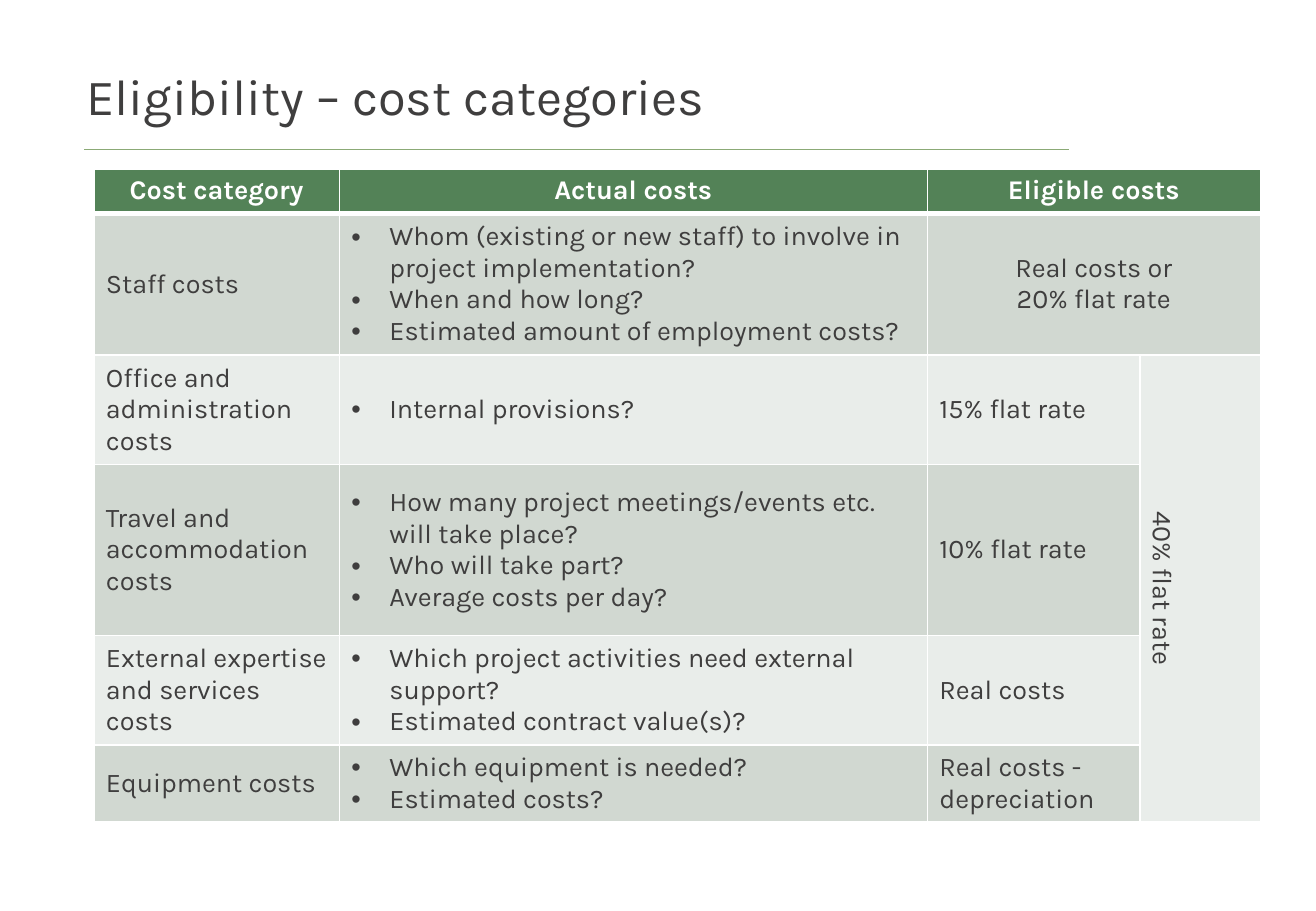
from lxml import etree
from pptx import Presentation
from pptx import util as u
from pptx.dml.color import RGBColor
from pptx.enum import shapes, text
from pptx.oxml import ns

INK = RGBColor(0x3F, 0x3E, 0x3E)
WHITE = RGBColor(0xFF, 0xFF, 0xFF)
GREEN = RGBColor(0x53, 0x82, 0x57)
RULE = RGBColor(0x8B, 0xAA, 0x76)
BANDS = [RGBColor(0xE9, 0xED, 0xEA), RGBColor(0xD1, 0xD8, 0xD1)]

MID = text.PP_ALIGN.CENTER
LEFT = text.PP_ALIGN.LEFT


def sub(node, tag, **attrs):
    return etree.SubElement(node, ns.qn(tag), **attrs)


class Deck:
    """Holds the style and the slide; lengths are percent of the slide."""
    font = "Karla"
    size = 16

    def __init__(self, wide, high):
        self.prs = Presentation()
        self.prs.slide_width = u.Inches(wide)
        self.prs.slide_height = u.Inches(high)
        self.slide = self.prs.slides.add_slide(self.prs.slide_layouts[6])

    def x(self, share):
        return u.Emu(round(self.prs.slide_width * share / 100))

    def y(self, share):
        return u.Emu(round(self.prs.slide_height * share / 100))

    def put(self, frame, lines, color, size=None, bold=False,
            align=LEFT, dots=False):
        frame.word_wrap = True
        for i, line in enumerate(lines):
            para = frame.paragraphs[0] if i == 0 else frame.add_paragraph()
            para.alignment = align
            if dots:
                props = para._p.get_or_add_pPr()
                hang = self.x(2.89)
                props.set("marL", str(hang))
                props.set("indent", str(-hang))
                sub(props, "a:buFont", typeface="Arial")
                sub(props, "a:buChar", char="•")
            run = para.add_run()
            run.text = line
            run.font.name = self.font
            run.font.size = u.Pt(size or self.size)
            run.font.bold = bold
            run.font.color.rgb = color

    def title(self, words, x, y, w, h):
        box = self.slide.shapes.add_textbox(
            self.x(x), self.y(y), self.x(w), self.y(h))
        box.text_frame.vertical_anchor = text.MSO_ANCHOR.BOTTOM
        self.put(box.text_frame, [words], INK, size=30)

    def rule(self, x1, x2, y):
        line = self.slide.shapes.add_connector(
            shapes.MSO_CONNECTOR.STRAIGHT,
            self.x(x1), self.y(y), self.x(x2), self.y(y))
        line.line.color.rgb = RULE
        line.line.width = u.Pt(0.5)
        sub(line._element.spPr, "a:effectLst")

    def table(self, x, y, cols, rows):
        frame = self.slide.shapes.add_table(
            len(rows), len(cols), self.x(x), self.y(y),
            self.x(sum(cols)), self.y(sum(rows)))
        grid = frame.table
        for col, w in zip(grid.columns, cols):
            col.width = self.x(w)
        for row, h in zip(grid.rows, rows):
            row.height = self.y(h)
        for r in range(len(rows)):
            for c in range(len(cols)):
                self.paint(grid.cell(r, c), r)
        return grid

    def paint(self, cell, r):
        props = cell._tc.get_or_add_tcPr()
        thick = {0: "a:lnB", 1: "a:lnT"}.get(r)
        for side in ("a:lnL", "a:lnR", "a:lnT", "a:lnB"):
            edge = sub(props, side, w=str(u.Pt(3 if side == thick else 1)))
            sub(sub(edge, "a:solidFill"), "a:srgbClr", val=str(WHITE))
        cell.fill.solid()
        cell.fill.fore_color.rgb = BANDS[r % 2] if r else GREEN
        if r:
            cell.vertical_anchor = text.MSO_ANCHOR.MIDDLE


HEADS = ["Cost category", "Actual costs", "Eligible costs"]

# Category, questions, eligible costs
ROWS = [
    ("Staff costs",
     ["Whom (existing or new staff) to involve in project implementation?",
      "When and how long?",
      "Estimated amount of employment costs?"],
     ["Real costs or", "20% flat rate"]),
    ("Office and administration costs",
     ["Internal provisions?"],
     ["15% flat rate"]),
    ("Travel and accommodation costs",
     ["How many project meetings/events etc. will take place?",
      "Who will take part?",
      "Average costs per day?"],
     ["10% flat rate"]),
    ("External expertise and services costs",
     ["Which project activities need external support?",
      "Estimated contract value(s)?"],
     ["Real costs"]),
    ("Equipment costs",
     ["Which equipment is needed?", "Estimated costs?"],
     ["Real costs - depreciation"]),
]


def main():
    deck = Deck(10.83, 7.5)

    # Heading
    deck.rule(6.4, 81.25, 16.4)
    deck.title("Eligibility – cost categories", 5.63, 1.73, 70.36, 12.67)

    # Table grid and merged cells
    grid = deck.table(7.13, 18.53, [18.65, 44.69, 16.16, 9.14],
                      [4.67, 15.2, 11.73, 18.8, 11.73, 8.27])
    for r in (0, 1):
        grid.cell(r, 2).merge(grid.cell(r, 3))
    grid.cell(2, 3).merge(grid.cell(5, 3))

    # Header row
    for c, head in enumerate(HEADS):
        deck.put(grid.cell(0, c).text_frame, [head], WHITE,
                 bold=True, align=MID)

    # Body rows
    for r, (name, asks, rate) in enumerate(ROWS, 1):
        deck.put(grid.cell(r, 0).text_frame, [name], INK)
        deck.put(grid.cell(r, 1).text_frame, asks, INK, dots=True)
        deck.put(grid.cell(r, 2).text_frame, rate, INK,
                 align=MID if r == 1 else LEFT)

    # Upright flat rate
    flat = grid.cell(2, 3)
    flat._tc.get_or_add_tcPr().set("vert", "vert")
    deck.put(flat.text_frame, ["40% flat rate"], INK, align=MID)

    deck.prs.save("out.pptx")


if __name__ == "__main__":
    main()
